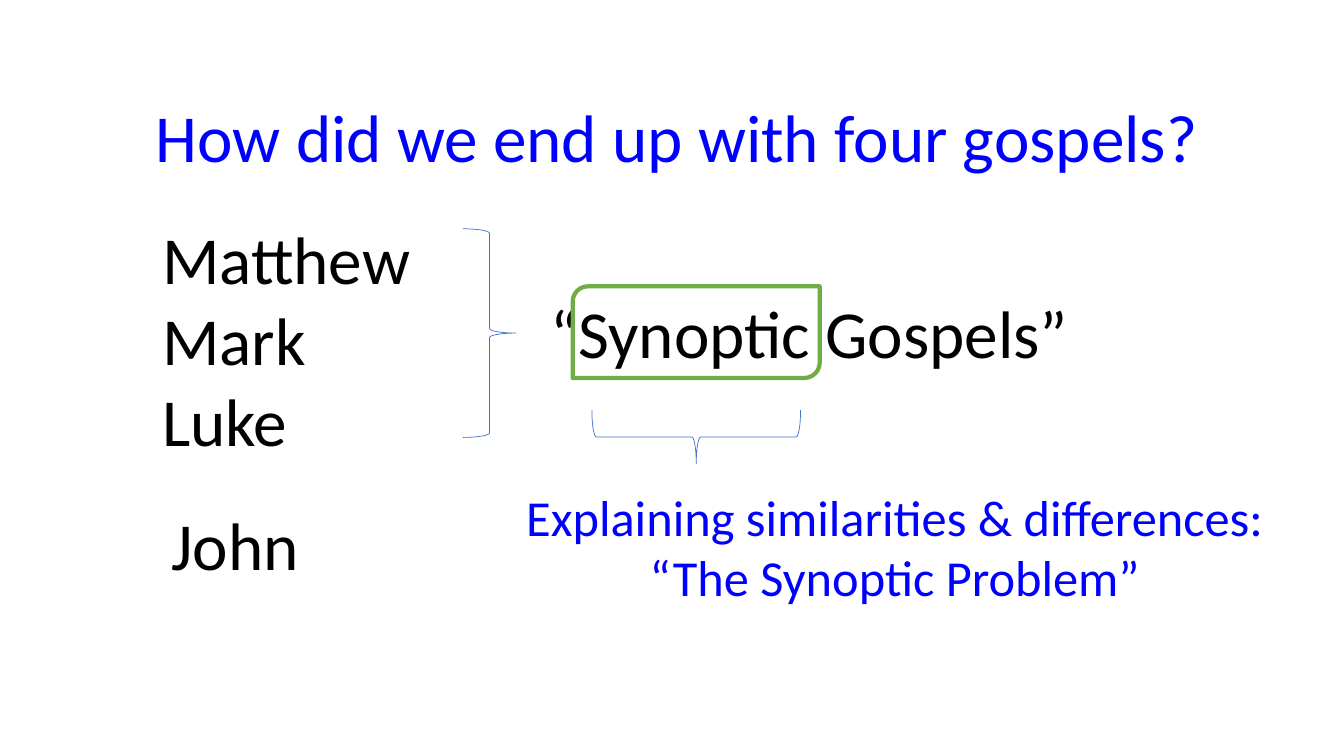
from dataclasses import dataclass

from pptx import Presentation
from pptx.dml.color import RGBColor
from pptx.enum.shapes import MSO_SHAPE
from pptx.enum.text import MSO_ANCHOR, MSO_AUTO_SIZE, PP_ALIGN
from pptx.shapes.autoshape import Shape
from pptx.slide import Slide
from pptx.util import Inches, Pt

BLACK = RGBColor(0x00, 0x00, 0x00)
BLUE = RGBColor(0x00, 0x00, 0xFF)
BRACE_BLUE = RGBColor(0x44, 0x72, 0xC4)
FRAME_GREEN = RGBColor(0x70, 0xAD, 0x47)

LEFT, CENTER = PP_ALIGN.LEFT, PP_ALIGN.CENTER


@dataclass(frozen=True)
class Box:
    left: float
    top: float
    width: float
    height: float

    def lengths(self) -> list[int]:
        return [Inches(value) for value in (self.left, self.top, self.width, self.height)]


@dataclass(frozen=True)
class Label:
    box: Box
    lines: tuple[str, ...]
    alignments: tuple[PP_ALIGN, ...] = (LEFT,)
    size: int = 48
    color: RGBColor = BLACK
    wrap: bool = False


@dataclass(frozen=True)
class Outline:
    preset: MSO_SHAPE
    box: Box
    color: RGBColor
    weight: float
    rotation: int = 0


TITLE = Label(Box(0.7, 0.9, 12.03, 0.91), ("How did we end up with four gospels?",),
              (CENTER,), color=BLUE, wrap=True)

LABELS = (
    Label(Box(1.51, 2.11, 2.7, 2.52), ("Matthew", "Mark", "Luke"), (LEFT,) * 3),
    Label(Box(1.6, 4.94, 1.48, 0.91), ("John",)),
    Label(Box(5.36, 2.84, 5.4, 0.91), ("“Synoptic Gospels”",)),
    Label(Box(5.12, 4.77, 7.59, 1.31),
          ("Explaining similarities & differences:", "“The Synoptic Problem”"),
          (LEFT, CENTER), size=36, color=BLUE),
)

OUTLINES = (
    Outline(MSO_SHAPE.RIGHT_BRACE, Box(4.59, 2.27, 0.53, 2.07), BRACE_BLUE, 0.5),
    Outline(MSO_SHAPE.ROUND_2_DIAG_RECTANGLE, Box(5.68, 2.84, 2.45, 0.91), FRAME_GREEN, 3),
    Outline(MSO_SHAPE.RIGHT_BRACE, Box(6.64, 3.3, 0.53, 2.07), BRACE_BLUE, 0.5, rotation=90),
)


def write_label(shape: Shape, label: Label) -> None:
    text_frame = shape.text_frame
    text_frame.text = "\n".join(label.lines)
    frame_format = {
        "word_wrap": label.wrap,
        "auto_size": MSO_AUTO_SIZE.SHAPE_TO_FIT_TEXT,
        "vertical_anchor": MSO_ANCHOR.TOP,
    }
    for name, value in frame_format.items():
        setattr(text_frame, name, value)
    font_format = {"name": "Calibri", "size": Pt(label.size)}
    for paragraph, alignment in zip(text_frame.paragraphs, label.alignments):
        paragraph.alignment = alignment
        for name, value in font_format.items():
            setattr(paragraph.font, name, value)
        paragraph.font.color.rgb = label.color


def place_title(slide: Slide, label: Label) -> None:
    title = slide.shapes.title
    for name, value in zip(("left", "top", "width", "height"), label.box.lengths()):
        setattr(title, name, value)
    write_label(title, label)


def add_label(slide: Slide, label: Label) -> None:
    write_label(slide.shapes.add_textbox(*label.box.lengths()), label)


def add_outline(slide: Slide, outline: Outline) -> None:
    shape = slide.shapes.add_shape(outline.preset, *outline.box.lengths())
    shape.rotation = outline.rotation
    shape.shadow.inherit = False
    shape.fill.background()
    shape.line.color.rgb = outline.color
    shape.line.width = Pt(outline.weight)


def main() -> None:
    presentation = Presentation()
    presentation.slide_width = Inches(13.33)
    presentation.slide_height = Inches(7.5)
    title_only = presentation.slide_layouts.get_by_name("Title Only")
    slide = presentation.slides.add_slide(title_only)
    place_title(slide, TITLE)
    for label in LABELS:
        add_label(slide, label)
    for outline in OUTLINES:
        add_outline(slide, outline)
    presentation.save("out.pptx")


if __name__ == "__main__":
    main()
